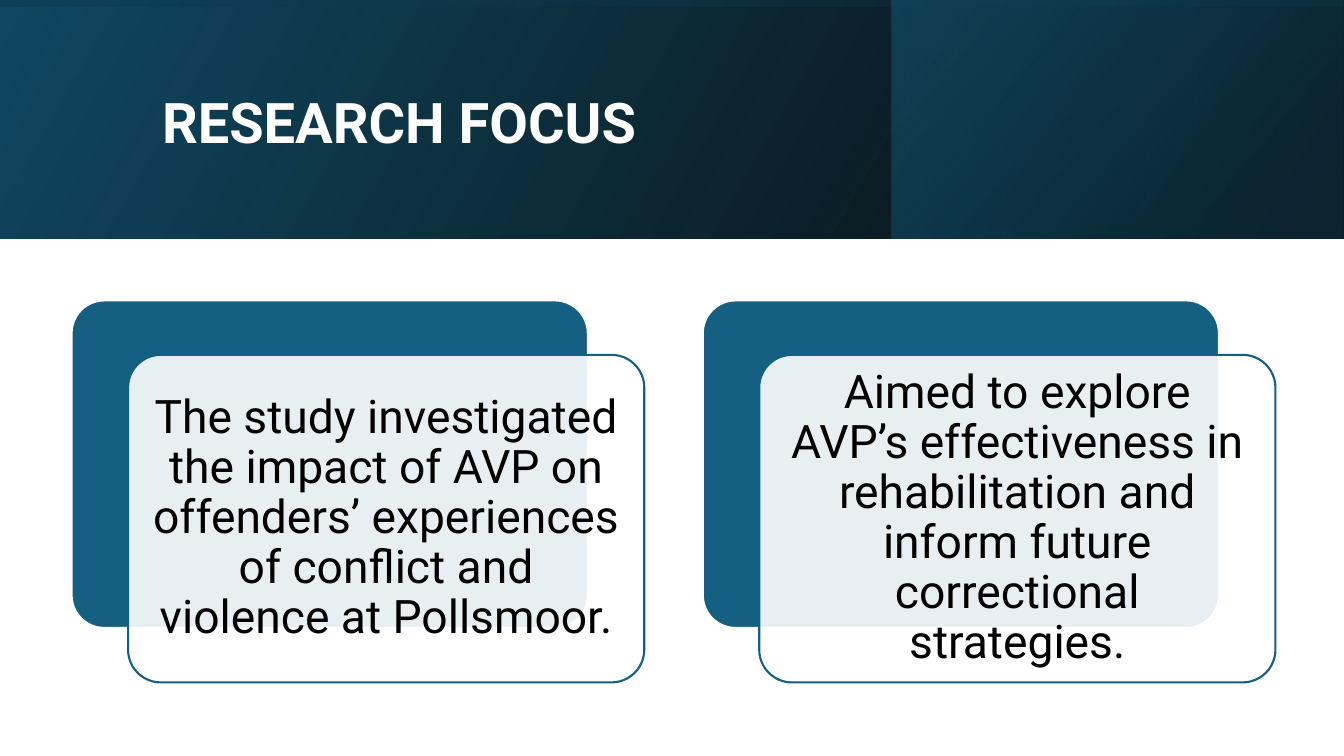
from dataclasses import dataclass

from lxml.etree import SubElement
from pptx import Presentation
from pptx.dml.color import RGBColor as RGB
from pptx.enum.shapes import MSO_SHAPE as SHAPE
from pptx.enum.text import MSO_ANCHOR as ANCHOR, PP_ALIGN as ALIGN
from pptx.oxml.ns import qn
from pptx.util import Inches, Pt


@dataclass(frozen=True)
class Theme:
    font: str = "Roboto"
    white: str = "FFFFFF"
    black: str = "000000"
    teal: str = "156082"
    deep_teal: str = "104862"
    night: str = "0B3041"
    title_size: int = 40
    body_size: int = 33
    line_width: float = 1.5
    line_spacing: float = 0.9


class SlideBuilder:
    def __init__(self, slide, theme):
        self.slide = slide
        self.theme = theme

    def band(self, left, top, width, height, stops, angle, rotation=0):
        """Mirrored rectangle with a gradient of (position, colour, opacity) stops."""
        band = self.slide.shapes.add_shape(
            SHAPE.RECTANGLE, Inches(left), Inches(top), Inches(width), Inches(height))
        band.shadow.inherit = False
        band.rotation = rotation
        band.line.fill.background()
        band.fill.gradient()
        properties = band._element.spPr
        properties.find(qn("a:xfrm")).set("flipH", "1")
        gradient = properties.find(qn("a:gradFill"))
        for child in list(gradient):
            gradient.remove(child)
        stop_list = SubElement(gradient, qn("a:gsLst"))
        for position, colour, opacity in stops:
            stop = SubElement(stop_list, qn("a:gs"), pos=str(position * 1000))
            tint = SubElement(stop, qn("a:srgbClr"), val=colour)
            SubElement(tint, qn("a:alpha"), val=str(opacity * 1000))
        SubElement(gradient, qn("a:lin"), ang=str(angle * 60000), scaled="0")

    def panel(self, left, top, width, height, fill, line, opacity=100):
        panel = self.slide.shapes.add_shape(
            SHAPE.ROUNDED_RECTANGLE, Inches(left), Inches(top), Inches(width), Inches(height))
        panel.adjustments[0] = 0.1
        panel.shadow.inherit = False
        panel.fill.solid()
        panel.fill.fore_color.rgb = RGB.from_string(fill)
        panel.line.color.rgb = RGB.from_string(line)
        panel.line.width = Pt(self.theme.line_width)
        if opacity < 100:
            tint = panel._element.spPr.find(qn("a:solidFill"))[0]
            SubElement(tint, qn("a:alpha"), val=str(opacity * 1000))

    def text(self, left, top, width, height, words, size, colour,
             bold=False, align=ALIGN.LEFT, inset=None):
        box = self.slide.shapes.add_textbox(
            Inches(left), Inches(top), Inches(width), Inches(height))
        frame = box.text_frame
        frame.word_wrap = True
        frame.vertical_anchor = ANCHOR.MIDDLE
        if inset is not None:
            frame.margin_left = frame.margin_right = Inches(inset)
            frame.margin_top = frame.margin_bottom = Inches(inset)
        paragraph = frame.paragraphs[0]
        paragraph.text = words
        paragraph.alignment = align
        paragraph.line_spacing = self.theme.line_spacing
        font = paragraph.font
        font.name, font.size, font.bold = self.theme.font, Pt(size), bold
        font.color.rgb = RGB.from_string(colour)

    def card(self, left, top, words):
        """Teal panel, a translucent panel offset over it, and its statement."""
        theme = self.theme
        width, height, offset, margin = 5.12, 3.25, 0.55, 0.1
        self.panel(left, top, width, height, theme.teal, theme.white)
        left, top = left + offset + 0.01, top + offset - 0.01
        self.panel(left, top, width, height, theme.white, theme.teal, opacity=90)
        self.text(left + margin, top + margin, width - 2 * margin, height - 2 * margin,
                  words, theme.body_size, theme.black, align=ALIGN.CENTER, inset=0.14)


def main():
    deck = Presentation()
    deck.slide_width, deck.slide_height = Inches(13.33), Inches(7.5)
    theme = Theme()
    page = SlideBuilder(deck.slides.add_slide(deck.slide_layouts[6]), theme)

    # Layered header
    width, height = 13.33, 2.37
    page.band(0, 0, width, height,
              [(0, theme.black, 96), (100, theme.deep_teal, 100)], 330)
    page.band(8.84, 0, 4.48, height,
              [(19, theme.night, 68), (100, theme.teal, 48)], 320)
    page.band((width - height) / 2, (height - width) / 2, height, width,
              [(23, theme.deep_teal, 16), (99, theme.black, 45)], 350, rotation=270)
    page.text(1.51, 0.38, 10.63, 1.72, "RESEARCH FOCUS",
              theme.title_size, theme.white, bold=True)

    # Focus cards
    statements = [
        "The study investigated the impact of AVP on offenders’ experiences "
        "of conflict and violence at Pollsmoor.",
        "Aimed to explore AVP’s effectiveness in rehabilitation and inform "
        "future correctional strategies.",
    ]
    for column, statement in enumerate(statements):
        page.card(0.71 + column * 6.26, 2.98, statement)

    deck.save("out.pptx")


if __name__ == "__main__":
    main()
